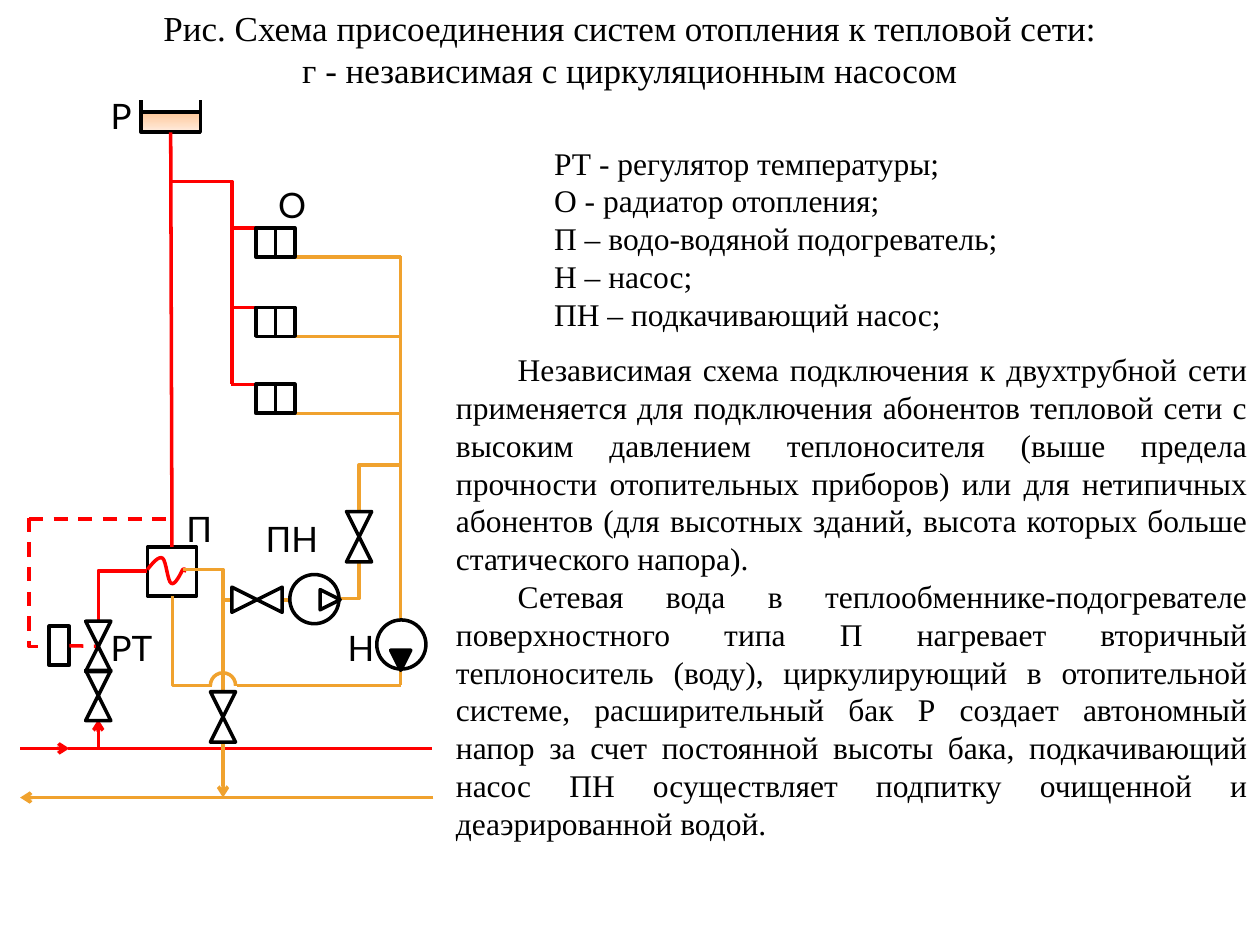
"""Build a slide with the diagram of an independent heating connection."""
import dataclasses
import typing
import lxml.etree
import pptx
import pptx.dml.color
import pptx.enum.dml
import pptx.enum.shapes
import pptx.enum.text
import pptx.oxml.ns
import pptx.util

Inches = pptx.util.Inches
Kind = pptx.enum.shapes.MSO_SHAPE
Align = pptx.enum.text.PP_ALIGN
Point = tuple[float, float]

@dataclasses.dataclass(frozen=True)
class Theme:
    supply: str = "FF0000"
    back: str = "F0A22E"
    ink: str = "000000"
    paper: str = "FFFFFF"
    water: tuple[str, str] = ("FFC798", "FFEDE0")
    serif: str = "Times New Roman"
    sans: str = "Lato"
    large: pptx.util.Pt = pptx.util.Pt(20)
    body: pptx.util.Pt = pptx.util.Pt(18)
    stroke: pptx.util.Pt = pptx.util.Pt(2)

class Pipe(typing.NamedTuple):
    points: list[Point]
    color: str
    dashed: bool = False
    arrow: bool = False

class Valve(typing.NamedTuple):
    left: float
    top: float
    horizontal: bool = False
    fill: str | None = None

class Text(typing.NamedTuple):
    box: tuple[float, float, float, float]
    lines: list[str]
    size: pptx.util.Pt
    font: str
    align: Align = Align.LEFT
    indent: float = 0

THEME = Theme()
RED, ORANGE = THEME.supply, THEME.back
RADIATOR_TOPS = (1.81, 2.44, 3.05)
TRIANGLE = 0.2
PIPES = [
    Pipe([(0.16, 5.94), (0.55, 5.94)], RED, arrow=True),
    Pipe([(0.54, 5.94), (3.43, 5.94)], RED),
    Pipe([(0.78, 5.94), (0.78, 5.71)], RED, arrow=True),
    Pipe([(3.18, 2.03), (3.18, 5.44)], ORANGE),
    Pipe([(3.44, 6.33), (0.16, 6.33)], ORANGE, arrow=True),
    Pipe([(0.23, 4.11), (0.23, 5.13), (0.39, 5.13)], RED, dashed=True),
    Pipe([(0.23, 4.12), (1.36, 4.12)], RED, dashed=True),
    Pipe([(1.88, 5.44), (3.18, 5.44)], ORANGE),
    Pipe([(1.17, 4.53), (0.78, 4.53), (0.78, 4.92)], RED),
    Pipe([(3.18, 3.69), (2.85, 3.69), (2.85, 4.75), (2.39, 4.75)], ORANGE),
    Pipe([(2.29, 4.76), (1.78, 4.76)], ORANGE),
    Pipe([(1.36, 1.44), (1.84, 1.44), (1.84, 3.05)], RED),
    Pipe([(1.45, 4.52), (1.77, 4.52), (1.77, 6.33)], ORANGE, arrow=True),
    Pipe([(1.37, 4.73), (1.37, 5.44), (1.68, 5.44)], ORANGE),
]
VALVES = [Valve(0.68, 4.93), Valve(0.68, 5.32), Valve(2.75, 4.06, fill=THEME.paper),
          Valve(1.84, 4.66, True, THEME.paper), Valve(1.67, 5.49, fill=THEME.paper)]
COIL = [(1.17, 4.52), (1.21, 4.47), (1.26, 4.41), (1.29, 4.43), (1.32, 4.45), (1.33, 4.62),
        (1.36, 4.63), (1.39, 4.65), (1.44, 4.54), (1.45, 4.52), (1.47, 4.51), (1.47, 4.52),
        (1.46, 4.54)]
LABELS = [("О", 2.11, 1.41, 0.39), ("Р", 0.78, 0.7, 0.39), ("РТ", 0.78, 4.92, 0.55),
          ("П", 1.38, 3.98, 0.55), ("ПН", 2.01, 4.06, 0.81), ("Н", 2.66, 4.92, 0.55)]
TEXTS = [
    Text((0, 0, 10, 0.77), ["Рис. Схема присоединения систем отопления к тепловой сети:",
                            "г - независимая с циркуляционным насосом"],
         THEME.large, THEME.serif, Align.CENTER),
    Text((4.3, 1.09, 3.83, 1.62), [
        "РТ - регулятор температуры;", "О - радиатор отопления;",
        "П – водо-водяной подогреватель;", "Н – насос;", "ПН – подкачивающий насос;",
    ], THEME.body, THEME.serif),
    Text((3.52, 2.73, 6.48, 4.04), [
        "Независимая схема подключения к двухтрубной сети применяется для подключения "
        "абонентов тепловой сети с высоким давлением теплоносителя (выше предела прочности "
        "отопительных приборов) или для нетипичных абонентов (для высотных зданий, высота "
        "которых больше статического напора).",
        "Сетевая вода в теплообменнике-подогревателе поверхностного типа П нагревает "
        "вторичный теплоноситель (воду), циркулирующий в отопительной системе, "
        "расширительный бак Р создает автономный напор за счет постоянной высоты бака, "
        "подкачивающий насос ПН осуществляет подпитку очищенной и деаэрированной водой.",
    ], THEME.body, THEME.serif, Align.JUSTIFY, 0.49),
] + [Text((left, top, width, 0.44), [name], THEME.large, THEME.sans)
     for name, left, top, width in LABELS]

def rgb(color: str) -> pptx.dml.color.RGBColor:
    return pptx.dml.color.RGBColor.from_string(color)

def set_values(target: typing.Any, values: dict[str, typing.Any]) -> None:
    for name, value in values.items():
        setattr(target, name, value)

def set_line(shape, color: str, dashed: bool = False, arrow: bool = False) -> None:
    shape.line.color.rgb = rgb(color)
    dash = pptx.enum.dml.MSO_LINE.DASH if dashed else None
    set_values(shape.line, {"width": THEME.stroke, "dash_style": dash})
    if arrow:
        outline = shape._element.spPr.find(pptx.oxml.ns.qn("a:ln"))
        lxml.etree.SubElement(outline, pptx.oxml.ns.qn("a:tailEnd"), type="arrow")

def add_shape(slide, kind: Kind, box: tuple, fill: str | None = None,
              color: str = THEME.ink, rotation: float = 0):
    shape = slide.shapes.add_shape(kind, *map(Inches, box))
    shape.rotation = rotation
    shape.shadow.inherit = False
    shape.fill.background()
    if fill:
        shape.fill.solid()
        shape.fill.fore_color.rgb = rgb(fill)
    set_line(shape, color)
    return shape

def add_pipe(slide, pipe: Pipe):
    points = [(Inches(x), Inches(y)) for x, y in pipe.points]
    if len(points) == 2:
        straight = pptx.enum.shapes.MSO_CONNECTOR.STRAIGHT
        shape = slide.shapes.add_connector(straight, *points[0], *points[1])
        set_line(shape, *pipe[1:])
        lxml.etree.SubElement(shape._element.spPr, pptx.oxml.ns.qn("a:effectLst"))
        return shape
    builder = slide.shapes.build_freeform(*points[0])
    builder.add_line_segments(points[1:], close=False)
    shape = builder.convert_to_shape()
    shape.shadow.inherit = False
    shape.fill.background()
    set_line(shape, *pipe[1:])
    return shape

def add_valve(slide, valve: Valve) -> None:
    for index, rotation in enumerate((90, 270) if valve.horizontal else (180, 0)):
        left = valve.left + index * TRIANGLE * valve.horizontal
        top = valve.top + index * TRIANGLE * (not valve.horizontal)
        add_shape(slide, Kind.ISOSCELES_TRIANGLE, (left, top, TRIANGLE, TRIANGLE),
                  valve.fill, rotation=rotation)

def add_radiator(slide, top: float, height: float = 0.23) -> None:
    add_pipe(slide, Pipe([(2.06, top), (1.83, top)], RED))
    add_pipe(slide, Pipe([(3.18, top + height), (2.08, top + height)], ORANGE))
    body = add_shape(slide, Kind.RECTANGLE, (2.03, top, 0.31, height))
    divider = add_pipe(slide, Pipe([(2.19, top), (2.19, top + height)], THEME.ink))
    divider.begin_connect(body, 0)
    divider.end_connect(body, 2)

def add_pump(slide, left: float, top: float, rotor: Point, rotation: float, fill: str) -> None:
    add_shape(slide, Kind.OVAL, (left, top, 0.39, 0.39), THEME.paper)
    add_shape(slide, Kind.ISOSCELES_TRIANGLE, (*rotor, 0.16, 0.16), fill, rotation=rotation)

def add_tank(slide):
    tank = add_shape(slide, Kind.RECTANGLE, (1.12, 0.89, 0.47, 0.16))
    tank.fill.gradient()
    tank.fill.gradient_angle = 270
    for stop, color in zip(tank.fill.gradient_stops, THEME.water):
        stop.color.rgb = rgb(color)
    for x in (1.12, 1.59):
        add_pipe(slide, Pipe([(x, 0.95), (x, 0.79)], THEME.ink))
    return tank

def curve_points(nodes: list[Point], steps: int = 8) -> list[Point]:
    points = nodes[:1]
    for start in range(0, len(nodes) - 1, 3):
        for t in (step / steps for step in range(1, steps + 1)):
            weights = ((1 - t) ** 3, 3 * t * (1 - t) ** 2, 3 * t * t * (1 - t), t ** 3)
            points.append(tuple(sum(weight * value for weight, value in zip(weights, axis))
                                for axis in zip(*nodes[start:start + 4])))
    return points

def add_text(slide, text: Text) -> None:
    frame = slide.shapes.add_textbox(*map(Inches, text.box)).text_frame
    fit = pptx.enum.text.MSO_AUTO_SIZE.SHAPE_TO_FIT_TEXT
    set_values(frame, {"word_wrap": True, "auto_size": fit, "text": "\n".join(text.lines)})
    for paragraph in frame.paragraphs:
        paragraph.alignment = text.align
        paragraph._p.get_or_add_pPr().set("indent", str(Inches(text.indent)))
        set_values(paragraph.font, {"name": text.font, "size": text.size})
        paragraph.font.color.rgb = rgb(THEME.ink)

def main() -> None:
    presentation = pptx.Presentation()
    set_values(presentation, {"slide_width": Inches(10), "slide_height": Inches(7.5)})
    slide = presentation.slides.add_slide(presentation.slide_layouts[6])
    add_shape(slide, Kind.OVAL, (1.67, 5.34, 0.2, 0.2), color=ORANGE)
    add_shape(slide, Kind.RECTANGLE, (1.66, 5.46, 0.23, 0.08), THEME.paper, THEME.paper)
    tank = add_tank(slide)
    heater = add_shape(slide, Kind.RECTANGLE, (1.17, 4.34, 0.39, 0.39))
    riser = add_pipe(slide, Pipe([(1.36, 4.34), (1.36, 1.05)], RED))
    riser.begin_connect(heater, 0)
    riser.end_connect(tank, 2)
    for pipe in [Pipe(curve_points(COIL), RED)] + PIPES:
        add_pipe(slide, pipe)
    controller = add_shape(slide, Kind.RECTANGLE, (0.39, 4.97, 0.16, 0.31), THEME.paper)
    signal = add_pipe(slide, Pipe([(0.55, 5.13), (0.79, 5.13)], RED, dashed=True))
    signal.begin_connect(controller, 3)
    for draw, items in ((add_radiator, RADIATOR_TOPS), (add_valve, VALVES), (add_text, TEXTS)):
        for item in items:
            draw(slide, item)
    add_pump(slide, 2.99, 4.92, (3.1, 5.16), 180, THEME.ink)
    add_pump(slide, 2.3, 4.56, (2.54, 4.68), 90, THEME.paper)
    presentation.save("out.pptx")

if __name__ == "__main__":
    main()
